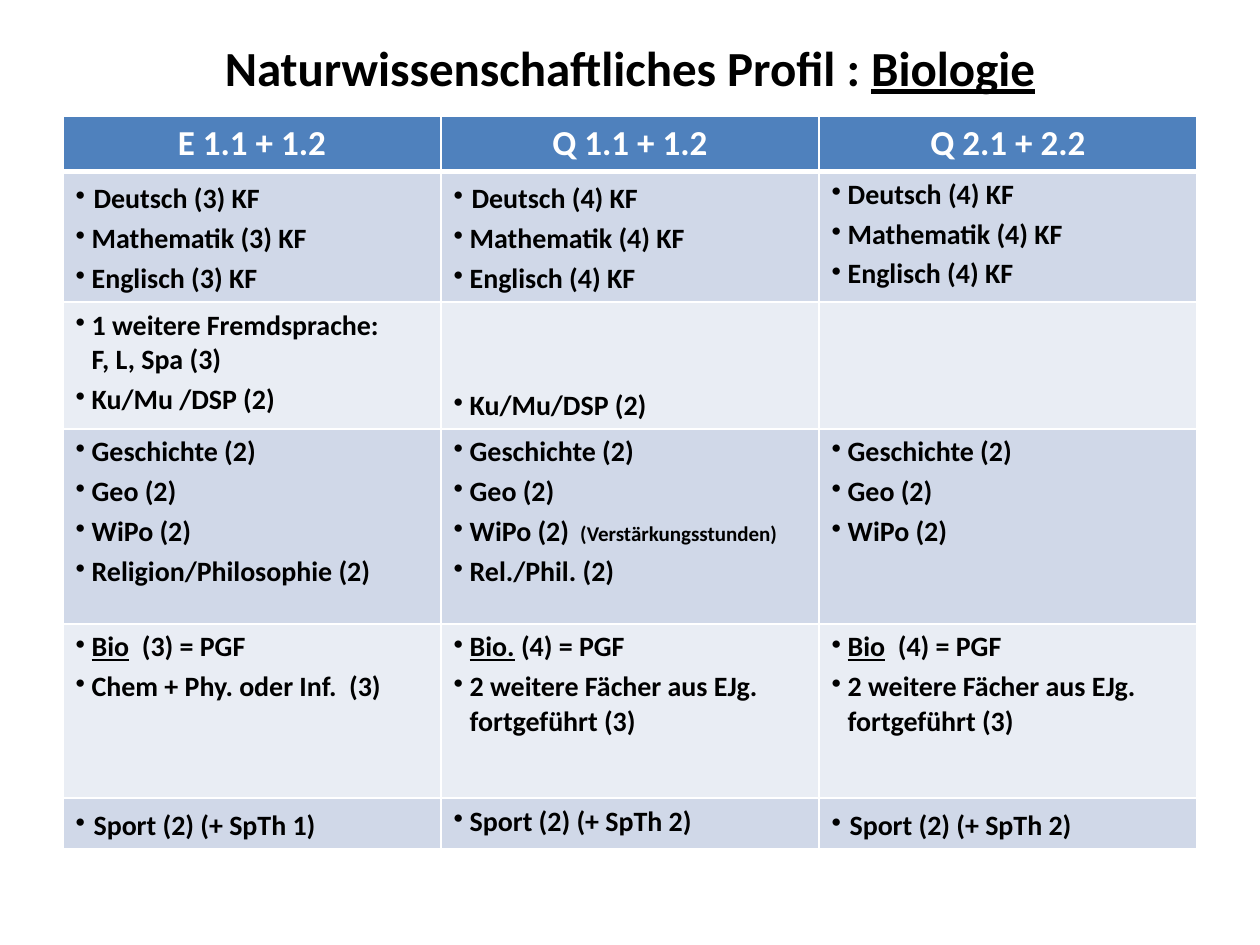
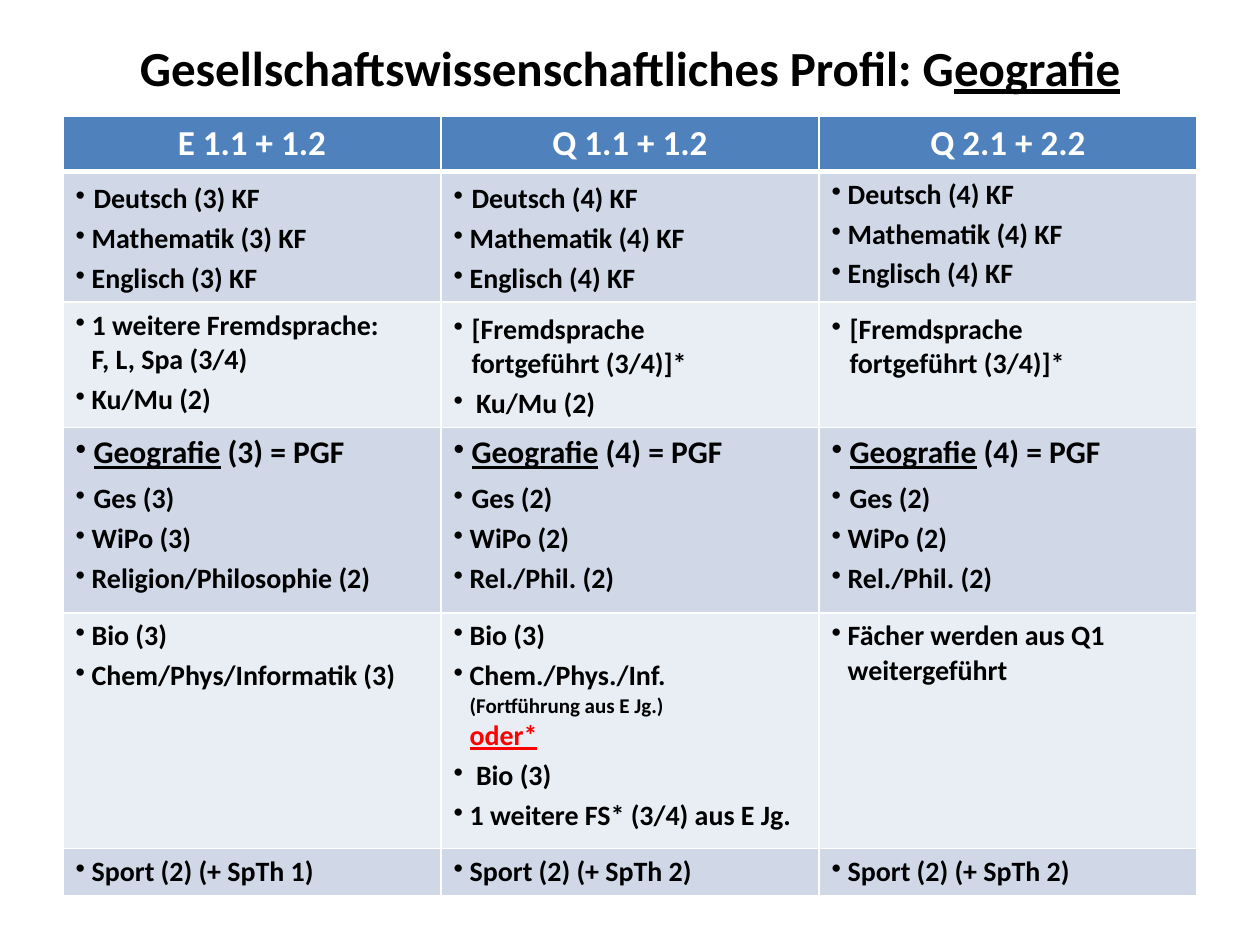
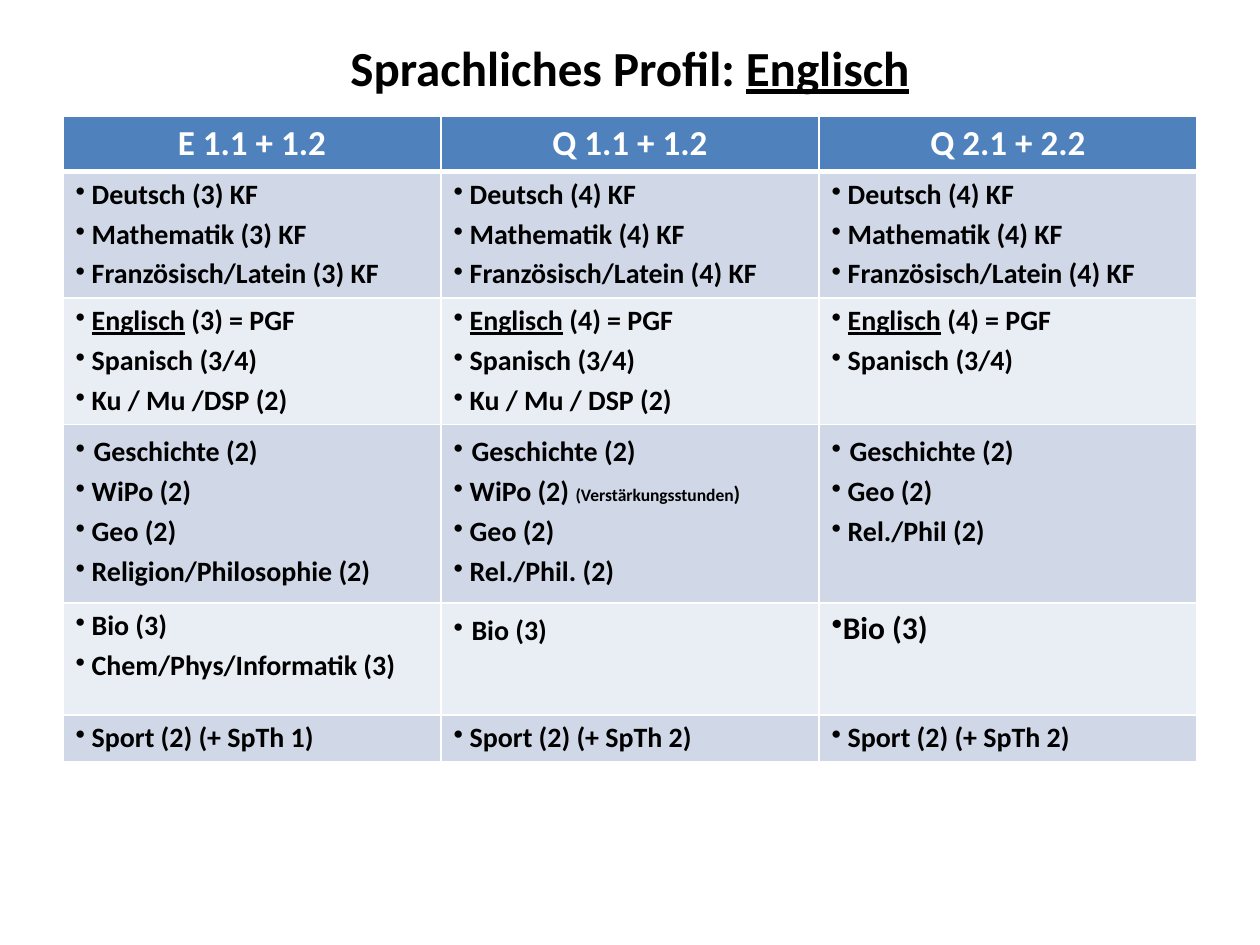
from copy import deepcopy
from dataclasses import dataclass

from lxml import etree
from pptx import Presentation
from pptx.dml.color import RGBColor
from pptx.enum.text import MSO_ANCHOR, MSO_AUTO_SIZE, PP_ALIGN
from pptx.oxml.ns import qn
from pptx.util import Pt

CENTER = PP_ALIGN.CENTER
MIDDLE = MSO_ANCHOR.MIDDLE
BOTTOM = MSO_ANCHOR.BOTTOM
NO_AUTOFIT = MSO_AUTO_SIZE.NONE

BLACK = RGBColor(0x00, 0x00, 0x00)
WHITE = RGBColor(0xFF, 0xFF, 0xFF)
RED = RGBColor(0xFF, 0x00, 0x00)
HEADER_BLUE = RGBColor(0x4F, 0x81, 0xBD)
BAND_DARK = RGBColor(0xD0, 0xD8, 0xE8)
BAND_LIGHT = RGBColor(0xE9, 0xED, 0xF4)

FONT = "Calibri"
TITLE_SIZE, HEADER_SIZE, LARGE_SIZE, BODY_SIZE, NOTE_SIZE = 28, 20, 18, 16, 12
LEFT, WIDTH = 36, 648
TITLE_TOP, TITLE_HEIGHT = 21.6, 33.1
TABLE_TOP = 66.2
CELL_MARGIN = 3.6
HANGING, WIDE_HANGING, TIGHT_HANGING = 9.2, 10.3, 6.3
LIFT = 2.4
THIN, THICK = 1, 3
TERMS = ["E 1.1 + 1.2", "Q 1.1 + 1.2", "Q 2.1 + 2.2"]


@dataclass
class Item:
    pieces: tuple
    lift: float = 0
    hanging: float = HANGING
    at_bottom: bool = False


def item(*pieces, **options):
    return Item(pieces, **options)


def lifted(*pieces):
    return item(*pieces, lift=LIFT, hanging=WIDE_HANGING)


def underlined(text, **text_format):
    return text, dict(text_format, underline=True)


def sized(text, size=NOTE_SIZE):
    return text, {"size": size}


def write_text(paragraph, text, size=BODY_SIZE, color=BLACK, bold=True, underline=False):
    for index, line in enumerate(text.split("\n")):
        run = paragraph.add_run()
        run.text = line
        run.font.name = FONT
        run.font.size = Pt(size)
        run.font.color.rgb = color
        run.font.bold = bold
        run.font.underline = underline
        if index:
            line_break = etree.Element(qn("a:br"))
            line_break.append(deepcopy(run.font._element))
            run._r.addprevious(line_break)
        if not line:
            run._r.getparent().remove(run._r)


def write_pieces(paragraph, pieces, **text_format):
    for piece in pieces:
        text, own_format = (piece, {}) if isinstance(piece, str) else piece
        write_text(paragraph, text, **{**text_format, **own_format})


class ProfileDeck:
    def __init__(self):
        self.presentation = Presentation()
        self.presentation.slide_width = Pt(720)
        self.presentation.slide_height = Pt(540)
        self.slide = None

    def add_slide(self):
        self.slide = self.presentation.slides.add_slide(self.presentation.slide_layouts[6])

    def title(self, *pieces):
        box = self.slide.shapes.add_textbox(Pt(LEFT), Pt(TITLE_TOP), Pt(WIDTH), Pt(TITLE_HEIGHT))
        frame = box.text_frame
        frame.word_wrap = True
        frame.auto_size = NO_AUTOFIT
        frame.vertical_anchor = MIDDLE
        frame.margin_top = frame.margin_bottom = 0
        frame.paragraphs[0].alignment = CENTER
        write_pieces(frame.paragraphs[0], pieces, size=TITLE_SIZE)

    def table(self, heights, rows):
        shape = self.slide.shapes.add_table(
            len(heights), len(TERMS), Pt(LEFT), Pt(TABLE_TOP), Pt(WIDTH), Pt(sum(heights)))
        table = shape.table
        for row, height in zip(table.rows, heights):
            row.height = Pt(height)
        for column, term in enumerate(TERMS):
            self.header_cell(table.cell(0, column), term)
            for row, cells in enumerate(rows, start=1):
                self.body_cell(table.cell(row, column), cells[column], row)

    def style_cell(self, cell, color, top=THIN, bottom=THIN):
        cell.margin_top = cell.margin_bottom = Pt(CELL_MARGIN)
        properties = cell._tc.get_or_add_tcPr()
        for side, width in (("L", THIN), ("R", THIN), ("T", top), ("B", bottom)):
            line = etree.SubElement(properties, qn(f"a:ln{side}"), w=str(Pt(width)))
            fill = etree.SubElement(line, qn("a:solidFill"))
            etree.SubElement(fill, qn("a:srgbClr"), val=str(WHITE))
        cell.fill.solid()
        cell.fill.fore_color.rgb = color

    def header_cell(self, cell, text):
        self.style_cell(cell, HEADER_BLUE, bottom=THICK)
        paragraph = cell.text_frame.paragraphs[0]
        paragraph.alignment = CENTER
        write_text(paragraph, text, size=HEADER_SIZE, color=WHITE)

    def body_cell(self, cell, entries, row):
        self.style_cell(cell, BAND_DARK if row % 2 else BAND_LIGHT,
                        top=THICK if row == 1 else THIN)
        frame = cell.text_frame
        for index, entry in enumerate(entries):
            if isinstance(entry, str):
                entry = item(entry)
            if index:
                paragraph = frame.add_paragraph()
                paragraph.space_before = Pt(0.2 * BODY_SIZE + entry.lift)
            else:
                paragraph = frame.paragraphs[0]
                cell.margin_top = Pt(CELL_MARGIN + entry.lift)
            if entry.at_bottom:
                cell.vertical_anchor = BOTTOM
            self.bullet(paragraph, entry.hanging)
            write_pieces(paragraph, entry.pieces)

    def bullet(self, paragraph, hanging):
        properties = paragraph._p.get_or_add_pPr()
        properties.set("marL", str(Pt(hanging)))
        properties.set("indent", str(-Pt(hanging)))
        etree.SubElement(properties, qn("a:buChar"), char="•")


def core_subjects(first_style, hours, third="Englisch"):
    return [first_style(f"Deutsch ({hours}) KF"), f"Mathematik ({hours}) KF", f"{third} ({hours}) KF"]


def sport(styles=(item, item, item)):
    return [[style(f"Sport (2) (+ SpTh {hours})")] for style, hours in zip(styles, (1, 2, 2))]


def biology_slide(deck):
    deck.add_slide()
    deck.title("Naturwissenschaftliches Profil : ", underlined("Biologie"))
    history = ["Geschichte (2)", "Geo (2)"]
    continued = "2 weitere Fächer aus EJg.\nfortgeführt (3)"
    deck.table([31, 74.5, 72.5, 111.5, 99.5, 29], [
        [core_subjects(lifted, 3), core_subjects(lifted, 4), core_subjects(item, 4)],
        [["1 weitere Fremdsprache:\nF, L, Spa (3)", "Ku/Mu /DSP (2)"],
         [item("Ku/Mu/DSP (2)", at_bottom=True)],
         []],
        [history + ["WiPo (2)", "Religion/Philosophie (2)"],
         history + [item("WiPo (2) ", sized(" (Verstärkungsstunden)")), "Rel./Phil. (2)"],
         history + ["WiPo (2)"]],
        [[item(underlined("Bio"), "  (3) = PGF"), "Chem + Phy. oder Inf.  (3)"],
         [item(underlined("Bio."), " (4) = PGF"), continued],
         [item(underlined("Bio"), "  (4) = PGF"), continued]],
        sport((lifted, item, lifted)),
    ])


def geography_slide(deck):
    deck.add_slide()
    deck.title("Gesellschaftswissenschaftliches Profil: G", underlined("eografie"))
    language = lifted("[Fremdsprache\nfortgeführt (3/4)]*")

    def society(profile_hours, hours, religion):
        profile = item(underlined("Geografie", size=LARGE_SIZE),
                       sized(f" ({profile_hours}) = PGF", LARGE_SIZE), hanging=WIDE_HANGING)
        return [profile, lifted(f"Ges ({hours})"), f"WiPo ({hours})", f"{religion} (2)"]

    deck.table([31, 74.5, 71.7, 106, 134.6, 26.5], [
        [core_subjects(lifted, 3), core_subjects(lifted, 4), core_subjects(item, 4)],
        [["1 weitere Fremdsprache:\nF, L, Spa (3/4)", "Ku/Mu (2)"],
         [language, " Ku/Mu (2)"],
         [language]],
        [society(3, 3, "Religion/Philosophie"), society(4, 2, "Rel./Phil."),
         society(4, 2, "Rel./Phil.")],
        [["Bio (3)", "Chem/Phys/Informatik (3)"],
         ["Bio (3)",
          item("Chem./Phys./Inf.\n", sized("(Fortführung aus E Jg.)"),
               underlined("\noder*", color=RED)),
          " Bio (3)",
          "1 weitere FS* (3/4) aus E Jg."],
         ["Fächer werden aus Q1\nweitergeführt"]],
        sport(),
    ])


def english_slide(deck):
    deck.add_slide()
    deck.title("Sprachliches Profil: ", underlined("Englisch"))
    history = lifted("Geschichte (2)")

    def languages(hours):
        return [item(underlined("Englisch"), f" ({hours}) = PGF"), "Spanisch (3/4)"]

    deck.table([31, 72, 72.3, 102, 64, 27], [
        [core_subjects(item, hours, "Französisch/Latein") for hours in (3, 4, 4)],
        [languages(3) + ["Ku / Mu /DSP (2)"], languages(4) + ["Ku / Mu / DSP (2)"], languages(4)],
        [[history, "WiPo (2)", "Geo (2)", "Religion/Philosophie (2)"],
         [history, item("WiPo (2) ", sized("(Verstärkungsstunden", 10), sized(")")),
          "Geo (2)", "Rel./Phil. (2)"],
         [history, "Geo (2)", "Rel./Phil (2)"]],
        [["Bio (3)", "Chem/Phys/Informatik (3)"],
         [lifted("Bio (3)")],
         [item(sized("Bio (3)", LARGE_SIZE), hanging=TIGHT_HANGING)]],
        sport(),
    ])


def main():
    deck = ProfileDeck()
    biology_slide(deck)
    geography_slide(deck)
    english_slide(deck)
    deck.presentation.save("out.pptx")


if __name__ == "__main__":
    main()
